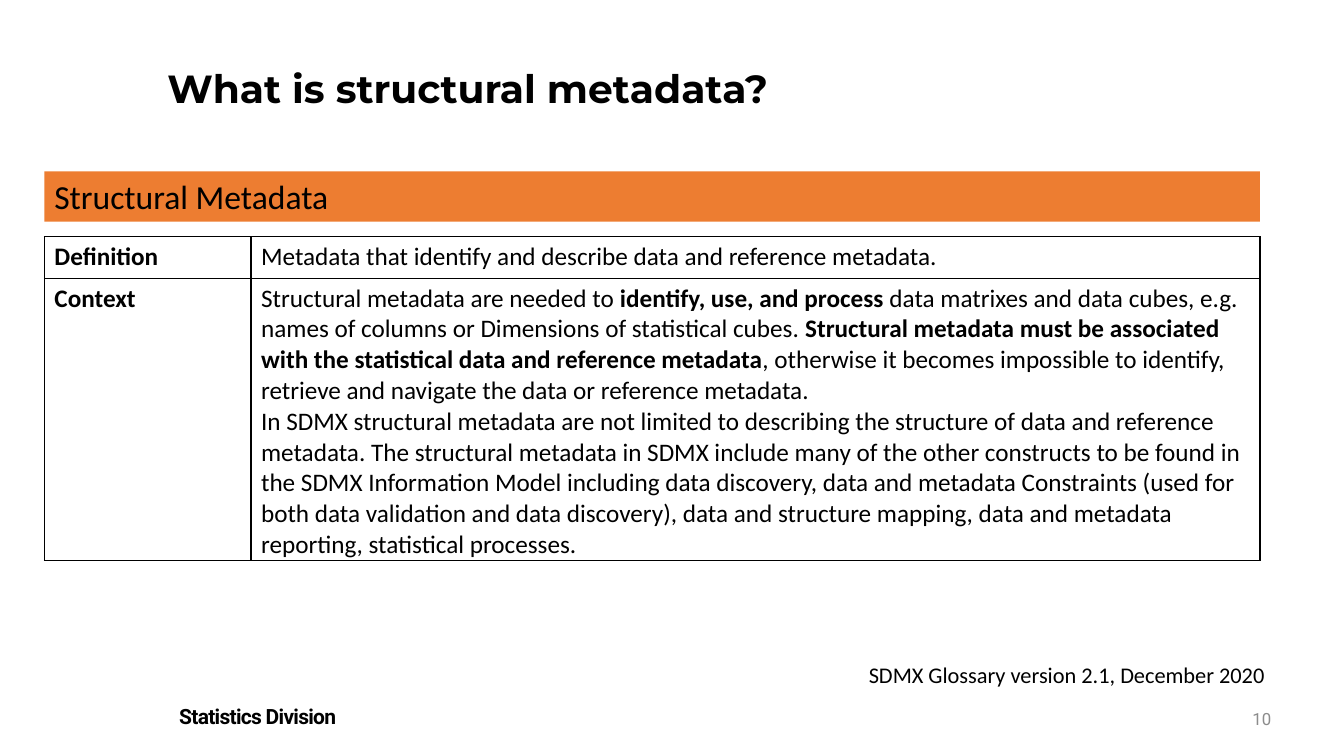
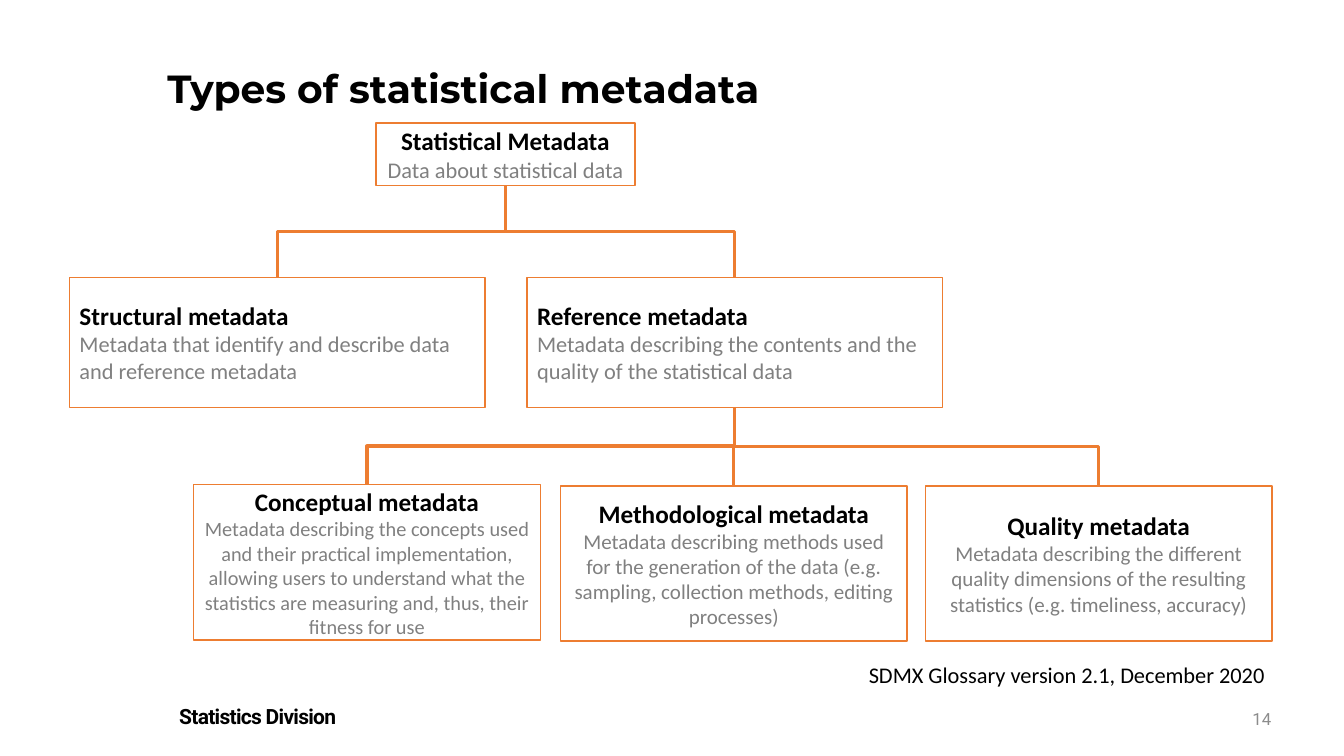
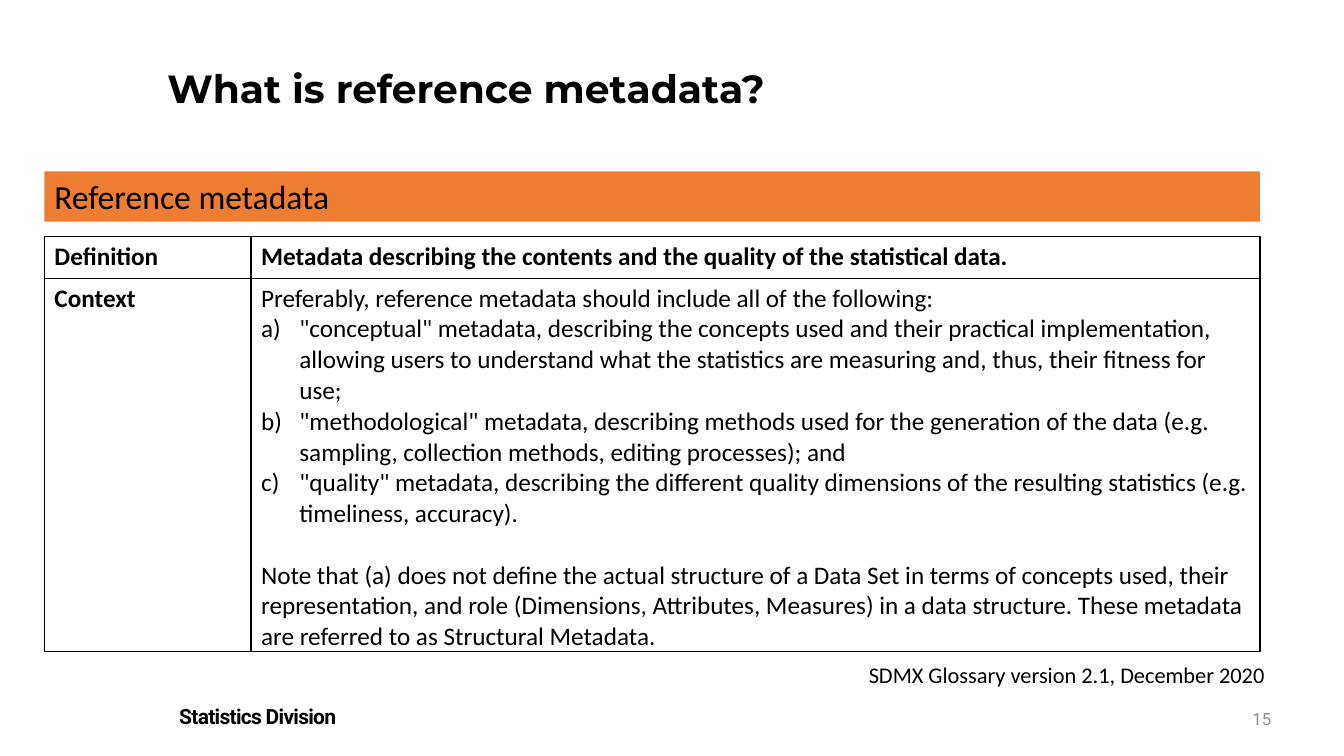
import pptx
import pptx.dml.color
import pptx.enum.shapes
import pptx.enum.text
import pptx.oxml
import pptx.oxml.ns
import pptx.util

COLORS = {
    "black": "000000",
    "orange": "ED7D31",
    "gray": "808080",
    "page": "8C8C8C",
}
ALIGN = pptx.enum.text.PP_ALIGN
ANCHOR = pptx.enum.text.MSO_ANCHOR
SHAPE = pptx.enum.shapes.MSO_SHAPE
CONNECTOR = pptx.enum.shapes.MSO_CONNECTOR
SOURCE = "SDMX Glossary version 2.1, December 2020"


def px(n):
    """Turn px, 100 to the inch, into EMU."""
    return pptx.util.Emu(int(n * 9144))


def rgb(name):
    return pptx.dml.color.RGBColor.from_string(COLORS[name])


class Deck:
    def __init__(self):
        self.prs = pptx.Presentation()
        self.prs.slide_width = pptx.util.Inches(13.333)
        self.prs.slide_height = px(750)
        self.slide = None

    def run(self, p, text, size, color="black", bold=False, font="Calibri"):
        r = p.add_run()
        r.text = text
        r.font.size = pptx.util.Pt(size)
        r.font.name = font
        r.font.bold = bold
        r.font.color.rgb = rgb(color)
        return r

    def new_slide(self, title, number):
        """Add a slide with its title, footer, source line and page number."""
        self.slide = self.prs.slides.add_slide(self.prs.slide_layouts[5])
        sp = self.slide.shapes.title
        sp.left, sp.top, sp.width, sp.height = map(px, (156, 64, 1086, 91))
        tf = sp.text_frame
        tf.auto_size = pptx.enum.text.MSO_AUTO_SIZE.NONE
        tf.vertical_anchor = ANCHOR.TOP
        p = tf.paragraphs[0]
        p.alignment = ALIGN.LEFT
        p.line_spacing = 0.9
        self.run(p, title, 28, bold=True, font="Montserrat")

        r = self.label((168, 693, 584, 35), "Statistics Division", 15, bold=True, font="Roboto")
        r.font._element.set("spc", "-50")
        self.label((852, 651, 418, 37), SOURCE, 16)
        self.label((1207, 693, 64, 40), str(number), 12, ALIGN.RIGHT, ANCHOR.MIDDLE,
                   color="page", font="Roboto")

    def label(self, box, text, size, align=ALIGN.LEFT, anchor=ANCHOR.TOP, **style):
        tf = self.slide.shapes.add_textbox(*map(px, box)).text_frame
        tf.word_wrap = True
        tf.vertical_anchor = anchor
        p = tf.paragraphs[0]
        p.alignment = align
        return self.run(p, text, size, **style)

    def rect(self, box, anchor):
        sp = self.slide.shapes.add_shape(SHAPE.RECTANGLE, *map(px, box))
        sp.shadow.inherit = False
        sp.text_frame.word_wrap = True
        sp.text_frame.vertical_anchor = anchor
        return sp

    def band(self, text):
        sp = self.rect((44, 170, 1206, 50), ANCHOR.TOP)
        sp.fill.solid()
        sp.fill.fore_color.rgb = rgb("orange")
        sp.line.fill.background()
        p = sp.text_frame.paragraphs[0]
        p.alignment = ALIGN.LEFT
        self.run(p, text, 24)

    def node(self, box, heading, detail, size=16, align=ALIGN.CENTER):
        sp = self.rect(box, ANCHOR.MIDDLE)
        sp.fill.background()
        sp.line.color.rgb = rgb("orange")
        sp.line.width = pptx.util.Pt(1)
        tf = sp.text_frame
        first, second = tf.paragraphs[0], tf.add_paragraph()
        first.alignment = second.alignment = align
        self.run(first, heading, 18, bold=True)
        self.run(second, detail, size, color="gray")
        return sp

    def link(self, parent, child):
        """Join two nodes by an elbow that leaves and arrives vertically."""
        x1, y1 = parent.left + parent.width // 2, parent.top + parent.height
        x2, y2 = child.left + child.width // 2, child.top
        cx, cy = (x1 + x2) // 2, (y1 + y2) // 2
        dx, dy = abs(x2 - x1) // 2, (y2 - y1) // 2
        to_right = x2 > x1
        if to_right:
            dy = -dy
        line = self.slide.shapes.add_connector(CONNECTOR.ELBOW, cx - dy, cy - dx, cx + dy, cy + dx)
        line.line.color.rgb = rgb("orange")
        line.line.width = pptx.util.Pt(2.25)
        props = line._element.spPr
        props.find(pptx.oxml.ns.qn("a:xfrm")).set("rot", str((270 if to_right else 90) * 60000))
        props.append(pptx.oxml.parse_xml(f"<a:effectLst {pptx.oxml.ns.nsdecls('a')}/>"))

    def table(self, rows, heights):
        """Each row is a term and its paragraphs: (runs, numbered, space before)."""
        frame = self.slide.shapes.add_table(len(rows), 2, *map(px, (44, 235, 1206, sum(heights))))
        table = frame.table
        table.first_row = table.horz_banding = False
        for col, width in zip(table.columns, (205, 1001)):
            col.width = px(width)
        for i, (term, paragraphs) in enumerate(rows):
            table.rows[i].height = px(heights[i])
            self.cell(table.cell(i, 0), [([(term, True)], False, 0)])
            self.cell(table.cell(i, 1), paragraphs)

    def cell(self, cell, paragraphs):
        cell.margin_bottom = 0
        props = cell._tc.get_or_add_tcPr()
        for side in "LRTB":
            props.append(pptx.oxml.parse_xml(
                f'<a:ln{side} {pptx.oxml.ns.nsdecls("a")} w="12700"><a:solidFill>'
                f'<a:srgbClr val="{COLORS["black"]}"/></a:solidFill></a:ln{side}>'))
        cell.fill.background()
        tf = cell.text_frame
        for i, (runs, numbered, before) in enumerate(paragraphs):
            p = tf.add_paragraph() if i else tf.paragraphs[0]
            if before:
                p.space_before = pptx.util.Pt(before)
            if numbered:
                pr = p._p.get_or_add_pPr()
                pr.set("marL", str(px(38)))
                pr.set("indent", str(px(-38)))
                pr.append(pptx.oxml.parse_xml(
                    f'<a:buAutoNum {pptx.oxml.ns.nsdecls("a")} type="alphaLcParenR"/>'))
            for text, bold in runs:
                self.run(p, text, 18, bold=bold)


def plain(text, numbered=False, before=0):
    return [(text, False)], numbered, before


def structural_slide(deck):
    deck.new_slide("What is structural metadata?", 10)
    deck.band("Structural Metadata")
    needed = [
        ("Structural metadata are needed to ", False),
        ("identify, use, and process", True),
        (" data matrixes and data cubes, e.g. names of columns or Dimensions of statistical cubes. ", False),
        ("Structural metadata must be associated with the statistical data and reference metadata", True),
        (", otherwise it becomes impossible to identify, retrieve and navigate the data or "
         "reference metadata.", False),
    ]
    deck.table([
        ("Definition", [plain("Metadata that identify and describe data and reference metadata.")]),
        ("Context", [
            (needed, False, 0),
            plain("In SDMX structural metadata are not limited to describing the structure of data and "
                  "reference metadata. The structural metadata in SDMX include many of the other "
                  "constructs to be found in the SDMX Information Model including data discovery, data "
                  "and metadata Constraints (used for both data validation and data discovery), data and "
                  "structure mapping, data and metadata reporting, statistical processes."),
        ]),
    ], (41, 280))


def types_slide(deck):
    deck.new_slide("Types of statistical metadata", 14)
    root = deck.node((373, 122, 257, 62), "Statistical Metadata", "Data about statistical data")
    structural = deck.node((69, 275, 412, 129), "Structural metadata",
                           "Metadata that identify and describe data and reference metadata",
                           align=ALIGN.LEFT)
    reference = deck.node((523, 275, 412, 129), "Reference metadata",
                          "Metadata describing the contents and the quality of the statistical data",
                          align=ALIGN.LEFT)
    conceptual = deck.node((192, 481, 344, 154), "Conceptual metadata",
                           "Metadata describing the concepts used and their practical implementation, "
                           "allowing users to understand what the statistics are measuring and, thus, "
                           "their fitness for use", 14.5)
    methodological = deck.node((556, 482, 344, 154), "Methodological metadata",
                               "Metadata describing methods used for the generation of the data (e.g. "
                               "sampling, collection methods, editing processes)", 15)
    quality = deck.node((918, 482, 344, 154), "Quality metadata",
                        "Metadata describing the different quality dimensions of the resulting "
                        "statistics (e.g. timeliness, accuracy)", 15)
    for parent, children in ((root, (structural, reference)),
                             (reference, (conceptual, methodological, quality))):
        for child in children:
            deck.link(parent, child)


def reference_slide(deck):
    deck.new_slide("What is reference metadata?", 15)
    deck.band("Reference metadata")
    definition = "Metadata describing the contents and the quality of the statistical data."
    deck.table([
        ("Definition", [([(definition, True)], False, 0)]),
        ("Context", [
            plain("Preferably, reference metadata should include all of the following:"),
            plain('"conceptual" metadata, describing the concepts used and their practical '
                  "implementation, allowing users to understand what the statistics are measuring and, "
                  "thus, their fitness for use;", numbered=True),
            plain('"methodological" metadata, describing methods used for the generation of the data '
                  "(e.g. sampling, collection methods, editing processes); and", numbered=True),
            plain('"quality" metadata, describing the different quality dimensions of the resulting '
                  "statistics (e.g. timeliness, accuracy).", numbered=True),
            plain("Note that (a) does not define the actual structure of a Data Set in terms of concepts "
                  "used, their representation, and role (Dimensions, Attributes, Measures) in a data "
                  "structure. These metadata are referred to as Structural Metadata.", before=22),
        ]),
    ], (41, 370))


def main():
    deck = Deck()
    structural_slide(deck)
    types_slide(deck)
    reference_slide(deck)
    deck.prs.save("out.pptx")


if __name__ == "__main__":
    main()
